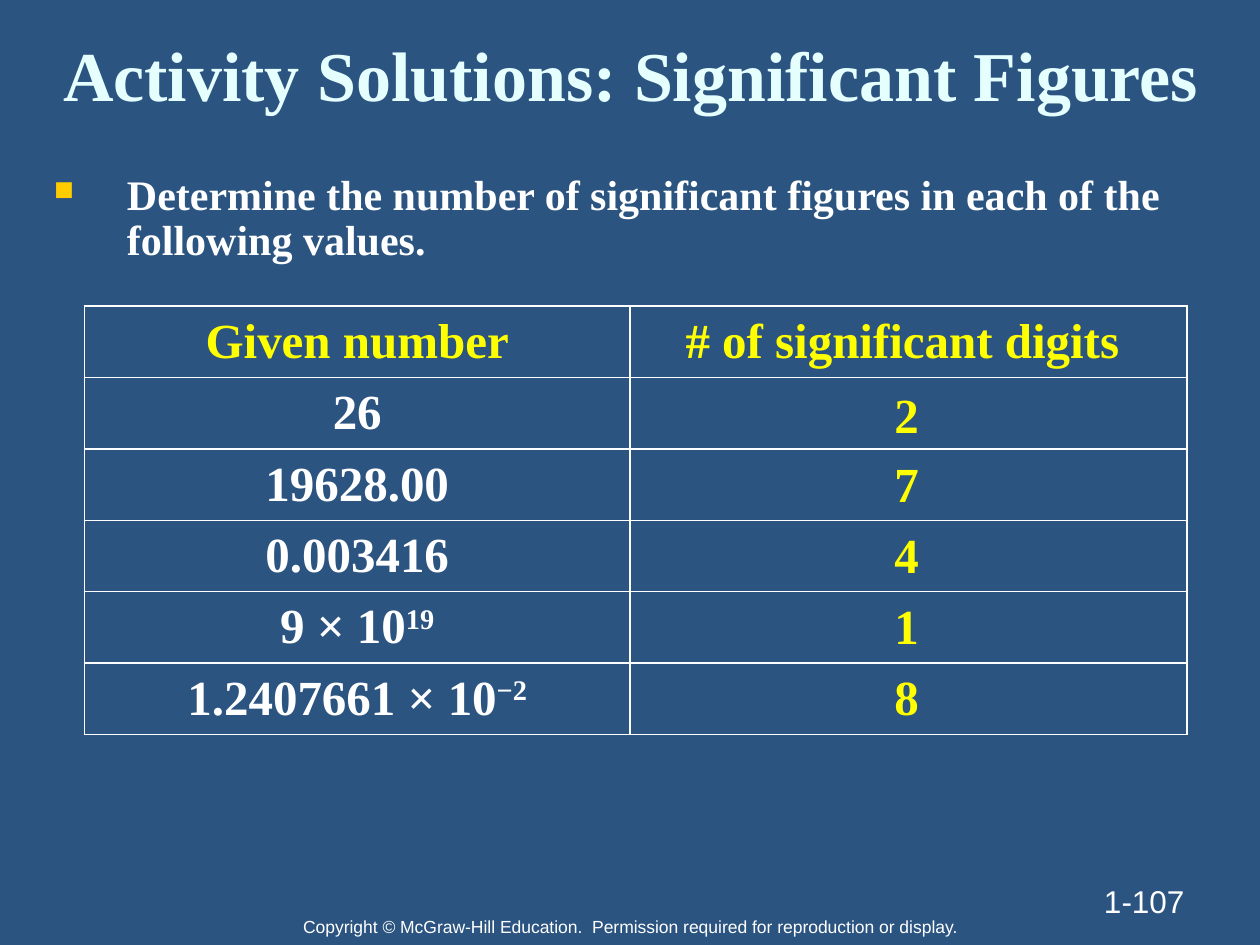
from lxml import etree
from pptx import Presentation
from pptx.dml.color import RGBColor
from pptx.enum.text import MSO_ANCHOR, MSO_AUTO_SIZE, PP_ALIGN
from pptx.oxml.ns import qn
from pptx.util import Inches, Pt

LEFT, CENTER, RIGHT = PP_ALIGN.LEFT, PP_ALIGN.CENTER, PP_ALIGN.RIGHT
TOP, MIDDLE, BOTTOM = MSO_ANCHOR.TOP, MSO_ANCHOR.MIDDLE, MSO_ANCHOR.BOTTOM
NO_AUTOFIT = MSO_AUTO_SIZE.NONE

SERIF, SANS = "Times New Roman", "Arial"
NAVY, WHITE, YELLOW, GOLD, ICE = "2B5481", "FFFFFF", "FFFF00", "FFCC00", "E5FFFF"
TITLE_ONLY = 5

HEADINGS = ("Given number", "# of significant digits ")
# Each given number is a mantissa with an optional exponent.
GIVEN_NUMBERS = [("26", ""), ("19628.00", ""), ("0.003416", ""),
                 ("9 × 10", "19"), ("1.2407661 × 10", "−2")]
ANSWERS = "27418"


def rgb(color):
    return RGBColor.from_string(color)


def add_run(paragraph, text, size, color, font=SERIF, bold=True):
    run = paragraph.add_run()
    run.text = text
    run.font.name, run.font.size, run.font.bold = font, Pt(size), bold
    run.font.color.rgb = rgb(color)
    return run


def place(shape, box):
    shape.left, shape.top, shape.width, shape.height = (Inches(v) for v in box)


def add_text_frame(slide, box, anchor=TOP):
    frame = slide.shapes.add_textbox(*(Inches(v) for v in box)).text_frame
    frame.word_wrap = True
    frame.auto_size = NO_AUTOFIT
    frame.vertical_anchor = anchor
    return frame


def add_title(slide, box):
    title = slide.shapes.title
    place(title, box)
    frame = title.text_frame
    frame.auto_size = NO_AUTOFIT
    frame.vertical_anchor = MIDDLE
    paragraph = frame.paragraphs[0]
    paragraph.alignment = CENTER
    add_run(paragraph, "Activity Solutions: Significant Figures", 40, ICE)


def add_line(slide, box, text, size, alignment, anchor):
    paragraph = add_text_frame(slide, box, anchor).paragraphs[0]
    paragraph.alignment = alignment
    add_run(paragraph, text, size, WHITE, SANS, False)


def set_bullet(paragraph, char, color, percent, indent):
    properties = paragraph._p.get_or_add_pPr()
    properties.set("marL", str(Inches(indent)))
    properties.set("indent", str(-Inches(indent)))
    bullet_color = etree.SubElement(properties, qn("a:buClr"))
    etree.SubElement(bullet_color, qn("a:srgbClr"), val=color)
    etree.SubElement(properties, qn("a:buSzPct"), val=str(percent * 1000))
    etree.SubElement(properties, qn("a:buChar"), char=char)


def add_instruction(slide, box):
    paragraph = add_text_frame(slide, box).paragraphs[0]
    set_bullet(paragraph, "■", GOLD, 65, 0.58)
    paragraph.line_spacing = 0.9
    add_run(paragraph, "Determine the number of significant figures in each "
                       "of the following values.", 24, WHITE)


def style_cell(cell):
    """Give the cell white borders on all sides and no fill."""
    properties = cell._tc.get_or_add_tcPr()
    for side in ("lnL", "lnR", "lnT", "lnB"):
        border = etree.SubElement(properties, qn(f"a:{side}"), w=str(Pt(1)))
        fill = etree.SubElement(border, qn("a:solidFill"))
        etree.SubElement(fill, qn("a:srgbClr"), val=WHITE)
    cell.fill.background()
    cell.vertical_anchor = MIDDLE
    cell.text_frame.paragraphs[0].alignment = CENTER


def add_number_table(slide, box, first_width):
    row_count = len(GIVEN_NUMBERS) + 1
    table = slide.shapes.add_table(
        row_count, len(HEADINGS), *(Inches(v) for v in box)).table
    table.first_row = table.horz_banding = False
    table.columns[0].width = Inches(first_width)
    table.columns[1].width = Inches(box[2] - first_width)
    for cell in table.iter_cells():
        style_cell(cell)
    for column, heading in enumerate(HEADINGS):
        add_run(table.cell(0, column).text_frame.paragraphs[0], heading, 28, YELLOW)
    for row, (mantissa, exponent) in enumerate(GIVEN_NUMBERS, 1):
        paragraph = table.cell(row, 0).text_frame.paragraphs[0]
        add_run(paragraph, mantissa, 28, WHITE)
        if exponent:
            power = add_run(paragraph, exponent, 28, WHITE)
            power.font._element.set("baseline", "30000")


def add_answers(slide, box):
    frame = add_text_frame(slide, box)
    last = len(ANSWERS) - 1
    for index, answer in enumerate(ANSWERS):
        paragraph = frame.add_paragraph() if index else frame.paragraphs[0]
        if index < last:
            paragraph.space_after = Pt(7 if index else 6)
        add_run(paragraph, answer, 28, YELLOW)


def main():
    presentation = Presentation()
    presentation.slide_width, presentation.slide_height = Inches(10), Inches(7.5)
    slide = presentation.slides.add_slide(presentation.slide_layouts[TITLE_ONLY])
    slide.background.fill.solid()
    slide.background.fill.fore_color.rgb = rgb(NAVY)

    add_line(slide, (0, 7.22, 10, 0.28),
             "Copyright © McGraw-Hill Education.  Permission required for "
             "reproduction or display.", 10, CENTER, TOP)
    add_line(slide, (7.17, 6.83, 2.33, 0.52), "1-107", 18, RIGHT, BOTTOM)
    add_title(slide, (0.17, 0.17, 9.67, 0.83))
    add_number_table(slide, (0.67, 2.43, 8.75, 3.4), 4.33)
    add_instruction(slide, (0.33, 1.33, 9.17, 0.75))
    add_answers(slide, (7, 3, 0.75, 2.82))
    presentation.save("out.pptx")


if __name__ == "__main__":
    main()
